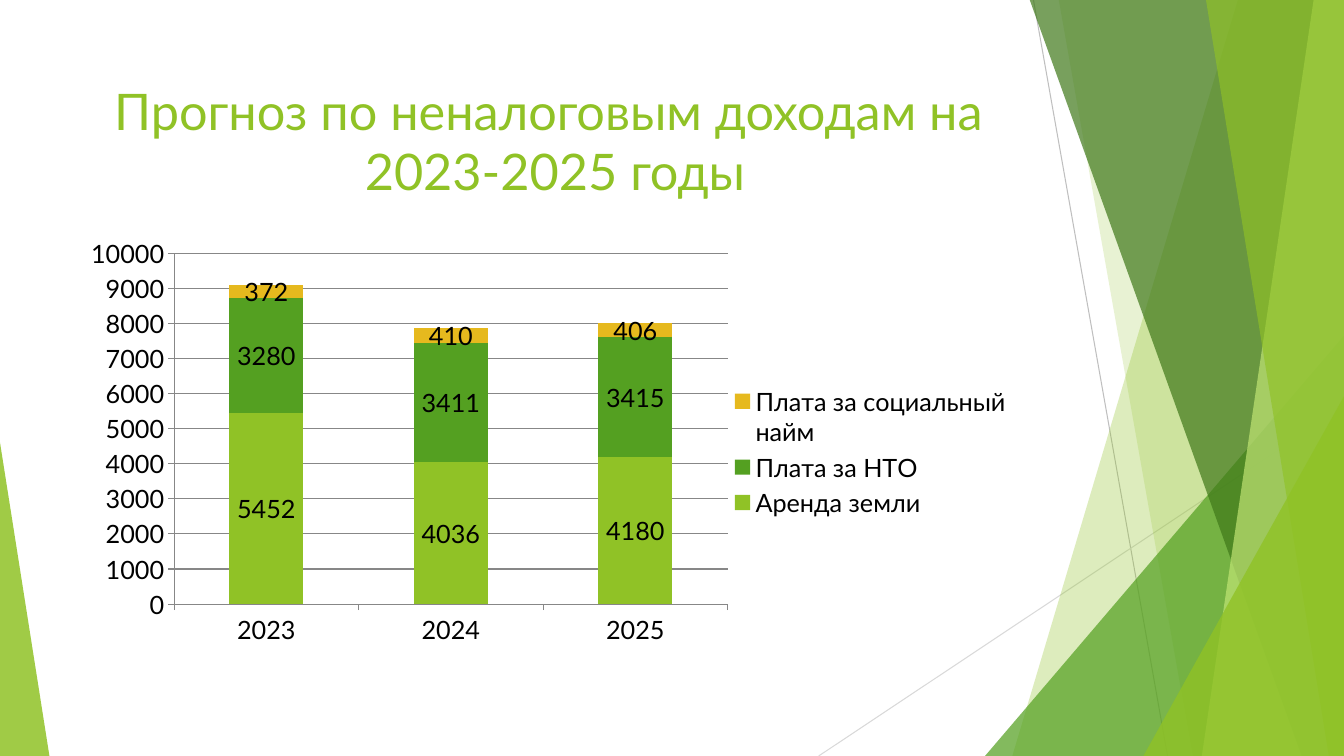
"""Builds the slide with the forecast of non-tax income for 2023-2025."""
import pptx
import pptx.chart.data
import pptx.dml.color
import pptx.enum.chart
import pptx.enum.shapes
import pptx.enum.text
import pptx.oxml
import pptx.oxml.ns
import pptx.util
from pptx.util import Inches

RGBColor = pptx.dml.color.RGBColor
LIME = RGBColor(0x90, 0xC2, 0x26)
GREEN = RGBColor(0x54, 0xA0, 0x21)
FOREST = RGBColor(0x3F, 0x78, 0x19)
PALE_LIME = RGBColor(0xC0, 0xE4, 0x74)
GOLD = RGBColor(0xE6, 0xB9, 0x1E)
BLACK = RGBColor(0, 0, 0)
AXIS_GREY = RGBColor(0x87, 0x87, 0x87)
MID_GREY = RGBColor(0xBF, 0xBF, 0xBF)
LIGHT_GREY = RGBColor(0xD9, 0xD9, 0xD9)

WIDTH, HEIGHT = 13.33, 7.5
TOP = -0.01


class ForecastSlide:
    """Holds the style and the current slide, and draws its elements."""

    font_name = "Lato"
    title_size = pptx.util.Pt(36)
    chart_size = pptx.util.Pt(18)
    hairline = pptx.util.Pt(0.75)

    def __init__(self, deck):
        """Add a blank slide to the deck."""
        self.slide = deck.slides.add_slide(deck.slide_layouts[6])
        self.shapes = self.slide.shapes

    def ray(self, start, end, color):
        """Draw a thin straight line."""
        ray = self.shapes.add_connector(
            pptx.enum.shapes.MSO_CONNECTOR.STRAIGHT,
            *(Inches(value) for value in (*start, *end)))
        ray.line.color.rgb = color
        ray.line.width = self.hairline
        ray.element.spPr.append(pptx.oxml.parse_xml(
            f"<a:effectLst {pptx.oxml.ns.nsdecls('a')}/>"))

    def tint(self, facet, color, opacity):
        """Fill a facet with a see-through colour and no outline."""
        facet.shadow.inherit = False
        facet.line.fill.background()
        facet.fill.solid()
        facet.fill.fore_color.rgb = color
        swatch = facet.element.spPr.find(".//" + pptx.oxml.ns.qn("a:srgbClr"))
        swatch.append(pptx.oxml.parse_xml(
            f'<a:alpha {pptx.oxml.ns.nsdecls("a")} val="{opacity * 1000}"/>'))

    def band(self, top_left, bottom_left, color, opacity):
        """Draw a slanted band reaching the right edge of the slide."""
        outline = self.shapes.build_freeform(Inches(top_left), Inches(TOP))
        corners = [(WIDTH, TOP), (WIDTH, HEIGHT), (bottom_left, HEIGHT)]
        outline.add_line_segments(
            [(Inches(x), Inches(y)) for x, y in corners], close=True)
        self.tint(outline.convert_to_shape(), color, opacity)

    def wedge(self, left, top, width, apex, color, opacity):
        """Draw a triangle standing on the bottom edge of the slide."""
        wedge = self.shapes.add_shape(
            pptx.enum.shapes.MSO_SHAPE.ISOSCELES_TRIANGLE, Inches(left),
            Inches(top), Inches(width), Inches(HEIGHT - top))
        wedge.adjustments[0] = apex
        self.tint(wedge, color, opacity)

    def title(self, lines, left, top, width, height):
        """Write the centred title, one run for each line."""
        frame = self.shapes.add_textbox(
            Inches(left), Inches(top), Inches(width), Inches(height)).text_frame
        frame.word_wrap = True
        frame.vertical_anchor = pptx.enum.text.MSO_ANCHOR.MIDDLE
        heading = frame.paragraphs[0]
        heading.alignment = pptx.enum.text.PP_ALIGN.CENTER
        for number, line in enumerate(lines):
            if number:
                heading.add_line_break()
            run = heading.add_run()
            run.text = line
            run.font.name = self.font_name
            run.font.size = self.title_size
            run.font.color.rgb = LIME

    def stacked_chart(self, years, incomes, left, top, width, height, plot_area):
        """Draw the stacked columns with value labels and a legend."""
        data = pptx.chart.data.CategoryChartData()
        data.categories = years
        for name, amounts, _ in incomes:
            data.add_series(name, amounts)
        chart = self.shapes.add_chart(
            pptx.enum.chart.XL_CHART_TYPE.COLUMN_STACKED, Inches(left),
            Inches(top), Inches(width), Inches(height), data).chart
        chart.font.name = self.font_name
        chart.font.size = self.chart_size
        chart.font.color.rgb = BLACK
        chart.has_title = False
        chart.has_legend = True
        chart.legend.position = pptx.enum.chart.XL_LEGEND_POSITION.RIGHT
        chart.legend.include_in_layout = False

        columns = chart.plots[0]
        columns.gap_width = 150
        columns.overlap = 100
        columns.vary_by_categories = False
        for series, (_, _, color) in zip(columns.series, incomes):
            series.format.fill.solid()
            series.format.fill.fore_color.rgb = color
            series.data_labels.show_value = True

        chart.value_axis.maximum_scale = 10000
        chart.value_axis.minimum_scale = 0
        chart.value_axis.major_unit = 1000
        chart.value_axis.has_major_gridlines = True
        for axis in (chart.category_axis, chart.value_axis):
            axis.major_tick_mark = pptx.enum.chart.XL_TICK_MARK.OUTSIDE
            axis.format.line.color.rgb = AXIS_GREY
        chart.value_axis.major_gridlines.format.line.color.rgb = AXIS_GREY
        self.place_plot(chart, plot_area)

    def place_plot(self, chart, plot_area):
        """Fix the inner plot area as fractions of the chart."""
        plot = chart.element.find(".//" + pptx.oxml.ns.qn("c:plotArea"))
        for automatic in plot.findall(pptx.oxml.ns.qn("c:layout")):
            plot.remove(automatic)
        extent = "".join(f'<c:{side} val="{share}"/>'
                         for side, share in zip("xywh", plot_area))
        plot.insert(0, pptx.oxml.parse_xml(
            f"<c:layout {pptx.oxml.ns.nsdecls('c')}><c:manualLayout>"
            '<c:layoutTarget val="inner"/><c:xMode val="edge"/>'
            f'<c:yMode val="edge"/>{extent}</c:manualLayout></c:layout>'))


def main():
    """Build and save the deck."""
    deck = pptx.Presentation()
    deck.slide_width = Inches(WIDTH)
    deck.slide_height = Inches(HEIGHT)
    forecast = ForecastSlide(deck)

    forecast.ray((10.25, 0), (11.58, HEIGHT), MID_GREY)
    forecast.ray((WIDTH, 4.03), (8.12, HEIGHT), LIGHT_GREY)
    forecast.band(12.28, 10.04, LIME, 30)
    forecast.band(10.5, 11.83, LIME, 20)
    forecast.wedge(9.77, 3.33, 3.56, 1, GREEN, 72)
    forecast.band(10.21, 12.91, FOREST, 70)
    forecast.band(13.03, 11.92, PALE_LIME, 70)
    forecast.band(11.96, 13.18, LIME, 65)
    forecast.wedge(11.34, 3.93, 1.99, 1, LIME, 80)
    forecast.wedge(0, 4.39, 0.49, 0, LIME, 85)

    forecast.title(["Прогноз по неналоговым доходам на", " 2023-2025 годы"],
                   0.74, 0.67, 9.4, 1.44)
    incomes = [
        ("Аренда земли", (5452, 4036, 4180), LIME),
        ("Плата за НТО", (3280, 3411, 3415), GREEN),
        ("Плата за социальный найм", (372, 410, 406), GOLD),
    ]
    forecast.stacked_chart(["2023", "2024", "2025"], incomes,
                           0.74, 2.36, 9.4, 4.24, (0.105, 0.034, 0.584, 0.823))
    deck.save("out.pptx")


if __name__ == "__main__":
    main()
